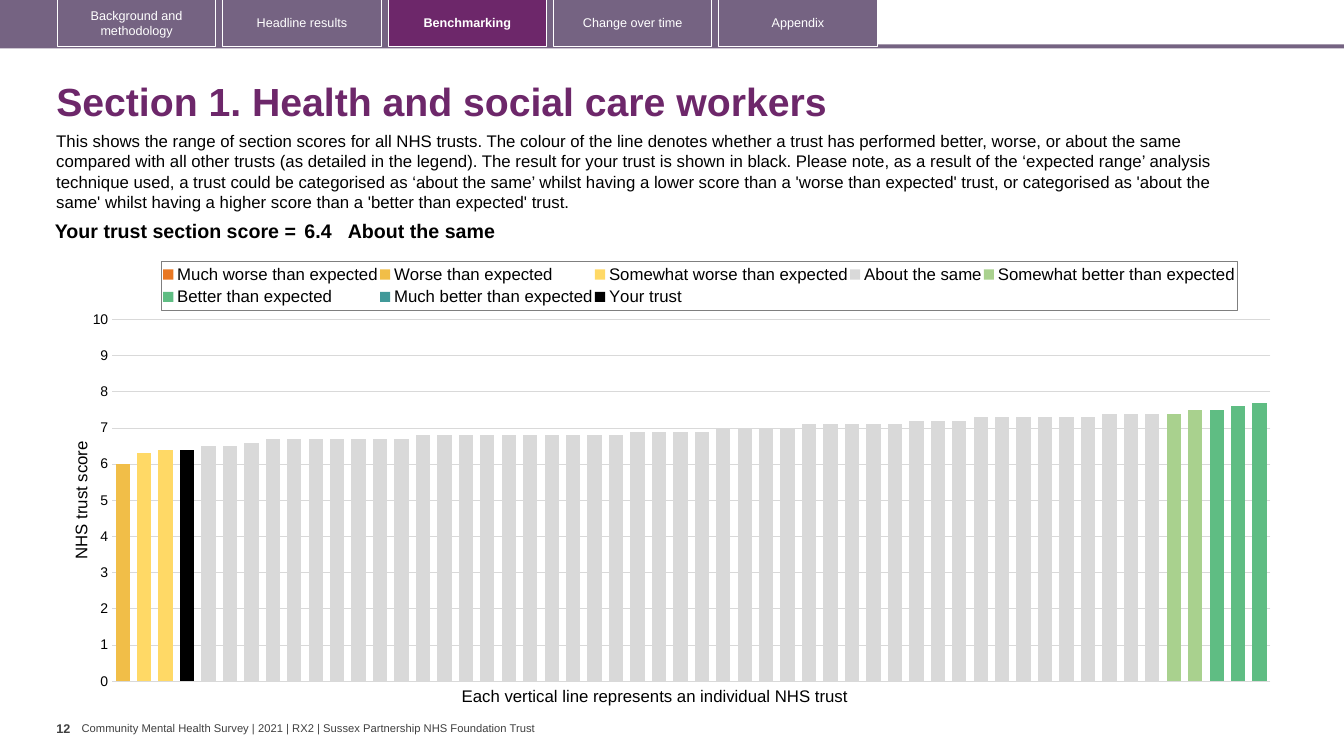
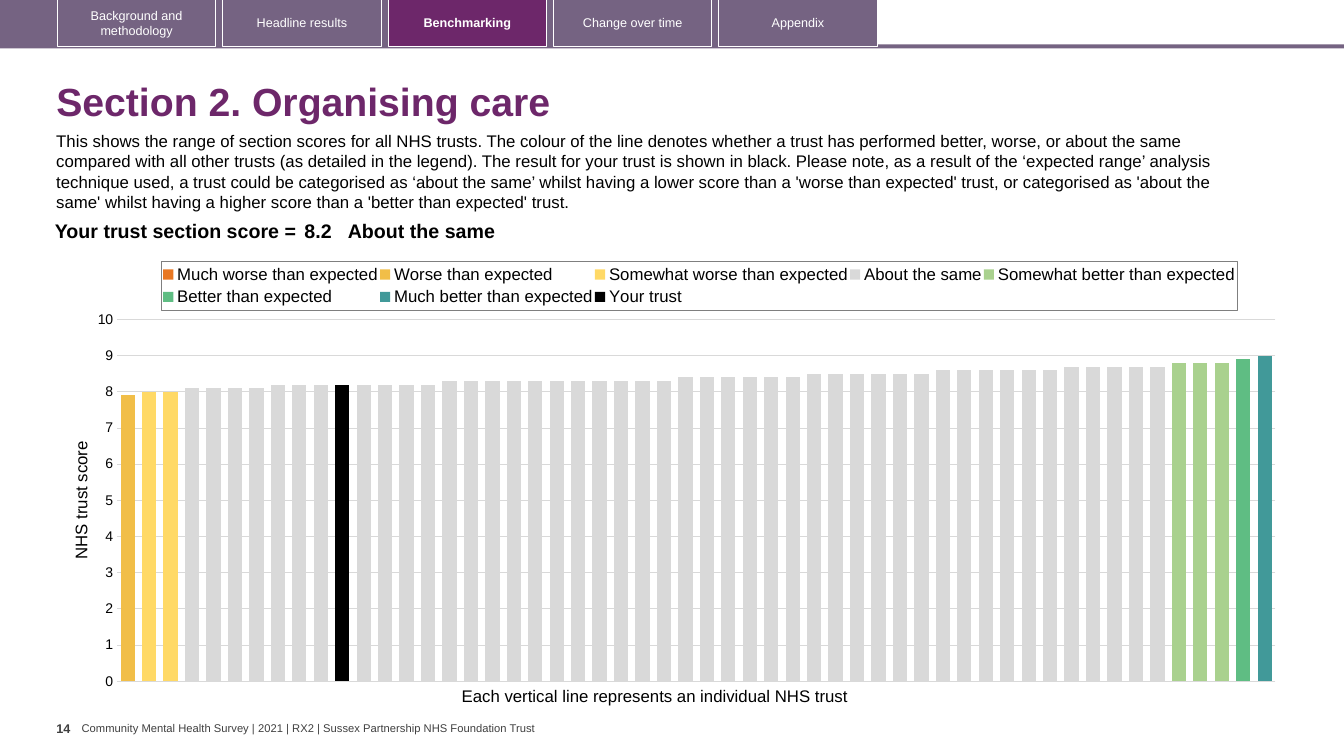
from copy import deepcopy

from lxml import etree
from pptx import Presentation
from pptx.chart.axis import ValueAxis
from pptx.chart.data import CategoryChartData
from pptx.dml.color import RGBColor
from pptx.enum.chart import XL_CHART_TYPE as ChartType
from pptx.enum.chart import XL_LEGEND_POSITION as LegendPos
from pptx.enum.chart import XL_TICK_LABEL_POSITION as LabelPos
from pptx.enum.chart import XL_TICK_MARK as TickMark
from pptx.enum.shapes import MSO_SHAPE as Shape
from pptx.enum.text import MSO_ANCHOR as Anchor
from pptx.enum.text import MSO_AUTO_SIZE as AutoSize
from pptx.enum.text import PP_ALIGN as Align
from pptx.oxml.ns import qn
from pptx.util import Inches, Pt

# Colours
PLUM = RGBColor(0x6D, 0x27, 0x6A)
MAUVE = RGBColor(0x75, 0x63, 0x82)
WHITE = RGBColor(0xFF, 0xFF, 0xFF)
BLACK = RGBColor(0, 0, 0)
FOOTER_GREY = RGBColor(0x40, 0x40, 0x40)
GRID_GREY = RGBColor(0xD9, 0xD9, 0xD9)
BAND_COLOURS = {
    "Much worse than expected": RGBColor(0xE8, 0x77, 0x22),
    "Worse than expected": RGBColor(0xF1, 0xBE, 0x48),
    "Somewhat worse than expected": RGBColor(0xFF, 0xD9, 0x66),
    "About the same": GRID_GREY,
    "Somewhat better than expected": RGBColor(0xA9, 0xD1, 0x8E),
    "Better than expected": RGBColor(0x5F, 0xBD, 0x83),
    "Much better than expected": RGBColor(0x41, 0x99, 0x99),
}

# Text formats
TITLE = {"size": Pt(28), "bold": True, "color": PLUM}
BODY = {"size": Pt(12), "color": BLACK}
SCORE = {"size": Pt(14), "bold": True, "color": BLACK}
TAB = {"size": Pt(9), "color": WHITE}
ACTIVE_TAB = {**TAB, "bold": True}
FOOTER = {"size": Pt(8), "color": FOOTER_GREY}
PAGE_NUMBER = {"size": Pt(9), "bold": True, "color": FOOTER_GREY}
AXIS_LABELS = {"size": Pt(10), "color": BLACK}

# Shared wording
TABS = ["Background and methodology", "Headline results", "Benchmarking",
        "Change over time", "Appendix"]
CURRENT_TAB = "Benchmarking"
FOOTER_TEXT = ("Community Mental Health Survey | 2021 | RX2 | "
               "Sussex Partnership NHS Foundation Trust")
INTRO = (
    "This shows the range of section scores for all NHS trusts. The colour of "
    "the line denotes whether a trust has performed better, worse, or about "
    "the same compared with all other trusts (as detailed in the legend). The "
    "result for your trust is shown in black. Please note, as a result of the "
    "‘expected range’ analysis technique used, a trust could be categorised as "
    "‘about the same’ whilst having a lower score than a 'worse than expected' "
    "trust, or categorised as 'about the same' whilst having a higher score "
    "than a 'better than expected' trust."
)

CHART_WIDTH, CHART_HEIGHT = 12.15, 4.44

# Each band lists (score, number of trusts) from left to right
SECTIONS = [
    {
        "title": "Section 1. Health and social care workers",
        "page": 12, "score": 6.4, "trust_position": 3, "plot_left": 0.44,
        "bands": {
            "Worse than expected": [(6, 1)],
            "Somewhat worse than expected": [(6.3, 1), (6.4, 1)],
            "About the same": [(6.4, 1), (6.5, 2), (6.6, 1), (6.7, 7),
                               (6.8, 10), (6.9, 4), (7, 4), (7.1, 5),
                               (7.2, 3), (7.3, 6), (7.4, 3)],
            "Somewhat better than expected": [(7.4, 1), (7.5, 1)],
            "Better than expected": [(7.5, 1), (7.6, 1), (7.7, 1)],
        },
    },
    {
        "title": "Section 2. Organising care",
        "page": 14, "score": 8.2, "trust_position": 10, "plot_left": 0.49,
        "bands": {
            "Worse than expected": [(7.9, 1)],
            "Somewhat worse than expected": [(8, 2)],
            "About the same": [(8.1, 4), (8.2, 8), (8.3, 11), (8.4, 6),
                               (8.5, 6), (8.6, 6), (8.7, 5)],
            "Somewhat better than expected": [(8.8, 3)],
            "Better than expected": [(8.9, 1)],
            "Much better than expected": [(9, 1)],
        },
    },
]


def style_font(font, style):
    font.name = "Arial"
    for attribute, value in style.items():
        if attribute == "color":
            font.color.rgb = value
        else:
            setattr(font, attribute, value)


def write(frame, text, style, align=Align.LEFT):
    paragraph = frame.paragraphs[0]
    paragraph.alignment = align
    run = paragraph.add_run()
    run.text = text
    style_font(run.font, style)
    return paragraph


def set_margins(target, horizontal, vertical):
    target.margin_left = target.margin_right = Inches(horizontal)
    target.margin_top = target.margin_bottom = Inches(vertical)


def add_text(slide, box, text, style, wrap=True, margins=(0.1, 0.05),
             anchor=Anchor.TOP, auto_size=AutoSize.SHAPE_TO_FIT_TEXT):
    frame = slide.shapes.add_textbox(*map(Inches, box)).text_frame
    frame.word_wrap = wrap
    frame.auto_size = auto_size
    frame.vertical_anchor = anchor
    set_margins(frame, *margins)
    return write(frame, text, style)


def add_block(slide, box, fill=None, outline=None):
    block = slide.shapes.add_shape(Shape.RECTANGLE, *map(Inches, box))
    block.shadow.inherit = False
    if fill is None:
        block.fill.background()
    else:
        block.fill.solid()
        block.fill.fore_color.rgb = fill
    if outline is None:
        block.line.fill.background()
    else:
        block.line.color.rgb = outline
        block.line.width = Pt(0.75)
    return block


def add_frame(slide, section):
    """Navigation tabs, title and footer."""
    add_block(slide, (-0.03, 0.44, 13.36, 0.04), MAUVE)
    add_block(slide, (-0.03, 0, 8.73, 0.47), MAUVE)
    for index, label in enumerate(TABS):
        active = label == CURRENT_TAB
        tab = add_block(slide, (0.57 + 1.64 * index, -0.01, 1.57, 0.47),
                        PLUM if active else None, WHITE)
        tab.text_frame.word_wrap = True
        tab.text_frame.vertical_anchor = Anchor.MIDDLE
        write(tab.text_frame, label, ACTIVE_TAB if active else TAB, Align.CENTER)

    title = add_text(slide, (0.46, 0.67, 12.49, 0.72), section["title"], TITLE,
                     anchor=Anchor.MIDDLE, auto_size=AutoSize.NONE)
    title.line_spacing = 0.9
    add_text(slide, (0.81, 7.16, 4.56, 0.13), FOOTER_TEXT, FOOTER, wrap=False,
             margins=(0, 0), anchor=Anchor.MIDDLE)
    add_text(slide, (0.56, 7.1, 0.25, 0.4), str(section["page"]), PAGE_NUMBER,
             wrap=False, margins=(0, 0.05), auto_size=AutoSize.NONE)


def add_score_row(slide, score):
    place = map(Inches, (0.35, 2.15, 11.69, 0.3))
    table = slide.shapes.add_table(1, 3, *place).table
    table.first_row = table.horz_banding = False
    columns = [
        (2.63, "Your trust section score =", Align.RIGHT, 0.04),
        (0.47, str(score), Align.LEFT, 0.04),
        (8.59, "About the same", Align.LEFT, 0),
    ]
    for index, (width, text, align, margin) in enumerate(columns):
        table.columns[index].width = Inches(width)
        cell = table.cell(0, index)
        cell.fill.background()
        set_margins(cell, margin, 0.04)
        write(cell.text_frame, text, SCORE, align)


def manual_layout(left, top, width, height, inner=False):
    """Layout element for a box given in inches within the chart."""
    layout = etree.Element(qn("c:layout"))
    manual = etree.SubElement(layout, qn("c:manualLayout"))
    settings = [("layoutTarget", "inner")] if inner else []
    settings += [("xMode", "edge"), ("yMode", "edge"),
                 ("x", left / CHART_WIDTH), ("y", top / CHART_HEIGHT),
                 ("w", width / CHART_WIDTH), ("h", height / CHART_HEIGHT)]
    for tag, value in settings:
        etree.SubElement(manual, qn(f"c:{tag}")).set("val", str(value))
    return layout


def remove_layout(element):
    for layout in element.findall(qn("c:layout")):
        element.remove(layout)


def move_last_series_to_right_axis(plot_area):
    bars = plot_area.find(qn("c:barChart"))
    right_bars = deepcopy(bars)
    bars.remove(bars.findall(qn("c:ser"))[-1])
    for series in right_bars.findall(qn("c:ser"))[:-1]:
        right_bars.remove(series)
    bars.addnext(right_bars)

    categories, values = (plot_area.find(qn(tag)) for tag in ("c:catAx", "c:valAx"))
    right_categories, right_values = deepcopy(categories), deepcopy(values)
    values.addnext(right_values)
    right_values.addnext(right_categories)
    new_ids = {axis.find(qn("c:axId")).get("val"): new_id for axis, new_id in
               ((categories, "50010"), (values, "50020"))}
    for part in (right_bars, right_categories, right_values):
        for reference in part.findall(qn("c:axId")) + part.findall(qn("c:crossAx")):
            reference.set("val", new_ids[reference.get("val")])

    right_values.find(qn("c:axPos")).set("val", "r")
    right_values.find(qn("c:crosses")).set("val", "max")
    right_axis = ValueAxis(right_values)
    right_axis.has_title = right_axis.has_major_gridlines = False
    right_axis.tick_label_position = LabelPos.NONE


def style_legend(chart):
    chart.has_legend = True
    chart.legend.position = LegendPos.TOP
    chart.legend.include_in_layout = False
    style_font(chart.legend.font, BODY)
    legend = chart._chartSpace.chart.find(qn("c:legend"))
    remove_layout(legend)
    legend.find(qn("c:legendPos")).addnext(manual_layout(0.93, 0.12, 10.67, 0.49))
    border = etree.Element(qn("c:spPr"))
    line = etree.SubElement(border, qn("a:ln"), w=str(Pt(0.75)))
    fill = etree.SubElement(line, qn("a:solidFill"))
    etree.SubElement(fill, qn("a:srgbClr"), val="7F7F7F")
    legend.find(qn("c:txPr")).addprevious(border)


def add_score_chart(slide, section):
    bands = {name: [score for score, count in section["bands"].get(name, [])
                    for _ in range(count)] for name in BAND_COLOURS}
    trust_count = sum(map(len, bands.values()))
    data = CategoryChartData()
    data.categories = [str(number + 1) for number in range(trust_count)]
    start = 0
    for name, scores in bands.items():
        after = trust_count - start - len(scores)
        data.add_series(name, [None] * start + scores + [None] * after)
        start += len(scores)
    data.add_series("Your trust", [
        section["score"] if position == section["trust_position"] else None
        for position in range(trust_count)])

    place = map(Inches, (0.67, 2.47, CHART_WIDTH, CHART_HEIGHT))
    chart = slide.shapes.add_chart(ChartType.COLUMN_CLUSTERED, *place, data).chart
    chart.has_title = False
    style_font(chart.font, AXIS_LABELS)
    chart.font.name = "Calibri"

    # Bars
    plot = chart.plots[0]
    plot.gap_width, plot.overlap, plot.vary_by_categories = 50, 100, False
    for series, colour in zip(plot.series, [*BAND_COLOURS.values(), BLACK]):
        series.format.fill.solid()
        series.format.fill.fore_color.rgb = colour

    # Axes
    chart.category_axis.visible = False
    axis = chart.value_axis
    axis.minimum_scale, axis.maximum_scale, axis.major_unit = 0, 10, 1
    axis.major_tick_mark = TickMark.NONE
    axis.format.line.fill.background()
    axis.major_gridlines.format.line.color.rgb = GRID_GREY
    axis.major_gridlines.format.line.width = Pt(0.75)
    style_font(axis.tick_labels.font, AXIS_LABELS)
    write(axis.axis_title.text_frame, "NHS trust score", {**BODY, "bold": False})

    # Legend and plot area
    style_legend(chart)
    plot_area = chart._chartSpace.chart.plotArea
    remove_layout(plot_area)
    plot_area.insert(0, manual_layout(section["plot_left"], 0.7, 11.49, 3.59, True))
    move_last_series_to_right_axis(plot_area)


def main():
    deck = Presentation()
    deck.slide_width, deck.slide_height = Inches(13.33), Inches(7.5)
    for section in SECTIONS:
        slide = deck.slides.add_slide(deck.slide_layouts[6])
        add_frame(slide, section)
        add_text(slide, (0.46, 1.25, 12.13, 0.91), INTRO, BODY)
        add_text(slide, (4.48, 6.75, 4.11, 0.3),
                 "Each vertical line represents an individual NHS trust", BODY,
                 wrap=False)
        add_score_chart(slide, section)
        add_score_row(slide, section["score"])
    deck.save("out.pptx")


if __name__ == "__main__":
    main()
